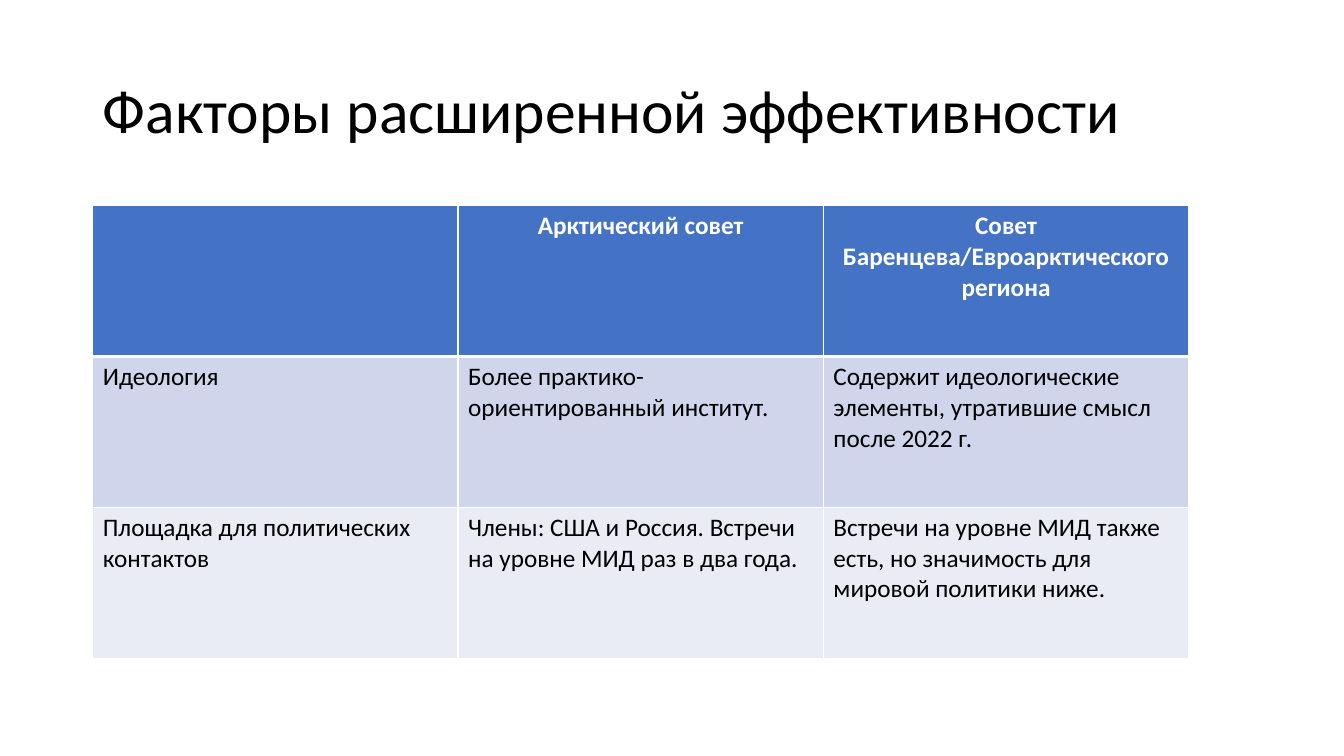
import pptx
import pptx.util
import pptx.dml.color
import pptx.enum.text
import pptx.oxml.ns
import lxml.etree

Inches, Pt = pptx.util.Inches, pptx.util.Pt
RGBColor = pptx.dml.color.RGBColor
ALIGN, ANCHOR = pptx.enum.text.PP_ALIGN, pptx.enum.text.MSO_ANCHOR
qn = pptx.oxml.ns.qn

BLACK = RGBColor(0x00, 0x00, 0x00)
WHITE = RGBColor(0xFF, 0xFF, 0xFF)
HEADER_BLUE = RGBColor(0x44, 0x72, 0xC4)
BAND_DARK = RGBColor(0xCF, 0xD5, 0xEA)
BAND_LIGHT = RGBColor(0xE9, 0xEB, 0xF5)


def write(tf, text, size=18, color=BLACK, bold=False, align=ALIGN.LEFT, spacing=None):
    p = tf.paragraphs[0]
    p.alignment = align
    p.line_spacing = spacing
    r = p.add_run()
    r.text = text
    r.font.name = "Calibri"
    r.font.size = Pt(size)
    r.font.bold = bold
    r.font.color.rgb = color


def add_border(cell, side, width):
    ln = lxml.etree.SubElement(cell._tc.get_or_add_tcPr(), qn(f"a:ln{side}"), w=str(Pt(width)))
    fill = lxml.etree.SubElement(ln, qn("a:solidFill"))
    lxml.etree.SubElement(fill, qn("a:srgbClr"), val=str(WHITE))


prs = pptx.Presentation()
prs.slide_width, prs.slide_height = Inches(13.33), Inches(7.5)
slide = prs.slides.add_slide(prs.slide_layouts[5])

# Title
title = slide.shapes.title
title.left, title.top = Inches(0.92), Inches(0.4)
title.width, title.height = Inches(11.5), Inches(1.45)
title.text_frame.vertical_anchor = ANCHOR.MIDDLE
write(title.text_frame, "Факторы расширенной эффективности", size=44, spacing=0.9)

# Comparison table
rows = [
    ["", "Арктический совет", "Совет Баренцева/Евроарктического региона"],
    ["Идеология", "Более практико-ориентированный институт.",
     "Содержит идеологические элементы, утратившие смысл после 2022 г."],
    ["Площадка для политических контактов",
     "Члены: США и Россия. Встречи на уровне МИД раз в два года.",
     "Встречи на уровне МИД также есть, но значимость для мировой политики ниже."],
]
row_fills = [HEADER_BLUE, BAND_DARK, BAND_LIGHT]
table = slide.shapes.add_table(3, 3, Inches(0.92), Inches(2.04),
                               Inches(10.87), Inches(4.49)).table

for i, (texts, row_fill) in enumerate(zip(rows, row_fills)):
    header = i == 0
    for j, text in enumerate(texts):
        cell = table.cell(i, j)
        # The rule under the header is thicker than the others
        widths = {"L": 1, "R": 1, "T": 3 if i == 1 else 1, "B": 3 if header else 1}
        for side, width in widths.items():
            add_border(cell, side, width)
        cell.fill.solid()
        cell.fill.fore_color.rgb = row_fill
        if text:
            write(cell.text_frame, text, color=WHITE if header else BLACK, bold=header,
                  align=ALIGN.CENTER if header else ALIGN.LEFT)

prs.save("out.pptx")
